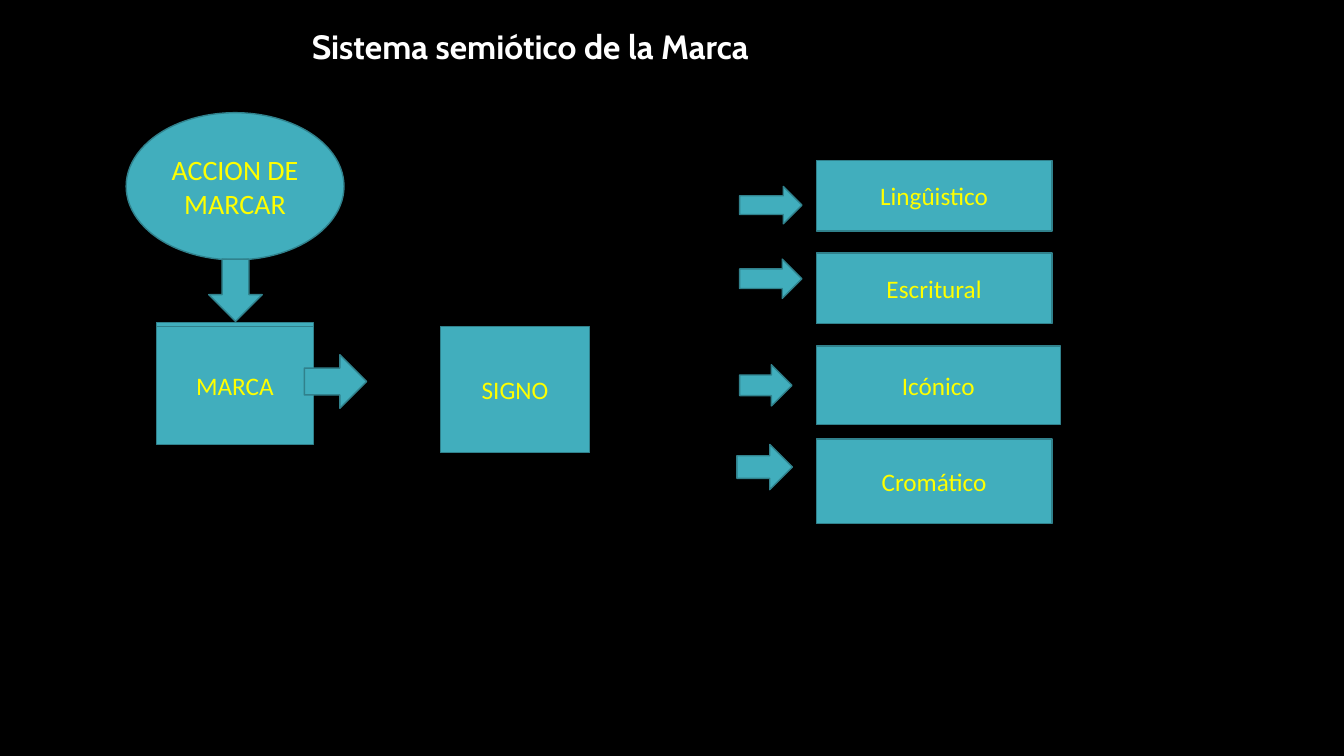
import dataclasses

import pptx
import pptx.dml.color
import pptx.enum.shapes
import pptx.enum.text
import pptx.util

Cm = pptx.util.Cm
Pt = pptx.util.Pt
RGBColor = pptx.dml.color.RGBColor
Shape = pptx.enum.shapes.MSO_SHAPE
Align = pptx.enum.text.PP_ALIGN
Anchor = pptx.enum.text.MSO_ANCHOR


@dataclasses.dataclass(frozen=True)
class Theme:
    background: str = "000000"
    fill: str = "41AEBD"
    outline: str = "30818C"
    title: str = "FFFFFF"
    label: str = "FFFF00"
    title_font: str = "Cabin"
    label_font: str = "Calibri"
    title_size: int = 24
    action_size: int = 20
    label_size: int = 18


theme = Theme()


def write_text(shape, text, font=theme.label_font, size=theme.label_size,
               color=theme.label, bold=False, align=Align.CENTER, anchor=Anchor.MIDDLE):
    frame = shape.text_frame
    frame.word_wrap = True
    frame.vertical_anchor = anchor
    paragraph = frame.paragraphs[0]
    paragraph.alignment = align
    run = paragraph.add_run()
    run.text = text
    run.font.name = font
    run.font.size = Pt(size)
    run.font.bold = bold
    run.font.color.rgb = RGBColor.from_string(color)


def add_figure(kind, left, top, width, height):
    """Add a teal outlined shape, placed in centimetres."""
    shape = slide.shapes.add_shape(kind, Cm(left), Cm(top), Cm(width), Cm(height))
    shape.shadow.inherit = False
    shape.fill.solid()
    shape.fill.fore_color.rgb = RGBColor.from_string(theme.fill)
    shape.line.color.rgb = RGBColor.from_string(theme.outline)
    shape.line.width = Pt(1)
    return shape


presentation = pptx.Presentation()
presentation.slide_width = Cm(33.87)
presentation.slide_height = Cm(19.05)
slide = presentation.slides.add_slide(presentation.slide_layouts[6])
slide.background.fill.solid()
slide.background.fill.fore_color.rgb = RGBColor.from_string(theme.background)

title = slide.shapes.add_textbox(Cm(7.61), Cm(0.53), Cm(13.93), Cm(1.27))
write_text(title, "Sistema semiótico de la Marca", font=theme.title_font,
           size=theme.title_size, color=theme.title, bold=True,
           align=Align.LEFT, anchor=Anchor.TOP)

# From the action to the mark and the sign
action = add_figure(Shape.OVAL, 3.18, 2.84, 5.49, 3.71)
write_text(action, "ACCION DE MARCAR", size=theme.action_size)
add_figure(Shape.DOWN_ARROW, 5.26, 6.53, 1.35, 1.57)
add_figure(Shape.RECTANGLE, 3.94, 8.13, 3.96, 2.97)
mark = add_figure(Shape.RECTANGLE, 3.94, 8.23, 3.96, 2.97)
write_text(mark, "MARCA")
add_figure(Shape.RIGHT_ARROW, 7.67, 8.94, 1.57, 1.35)
sign = add_figure(Shape.RECTANGLE, 11.1, 8.23, 3.76, 3.18)
write_text(sign, "SIGNO")

# Sign systems: label, box size, arrow position and size
systems = [
    ("Lingûistico", (5.94, 1.78), (18.64, 4.7, 1.57, 0.94)),
    ("Escritural", (5.94, 1.78), (18.64, 6.53, 1.57, 0.99)),
    ("Icónico", (6.15, 1.98), (18.64, 9.19, 1.32, 1.04)),
    ("Cromático", (5.94, 2.13), (18.57, 11.2, 1.4, 1.14)),
]
SYSTEM_LEFT, SYSTEM_TOP, SYSTEM_PITCH = 20.57, 4.04, 2.34
for row, (label, box_size, arrow) in enumerate(systems):
    add_figure(Shape.RIGHT_ARROW, *arrow)
    box = add_figure(Shape.RECTANGLE, SYSTEM_LEFT, SYSTEM_TOP + row * SYSTEM_PITCH, *box_size)
    write_text(box, label)

presentation.save("out.pptx")
